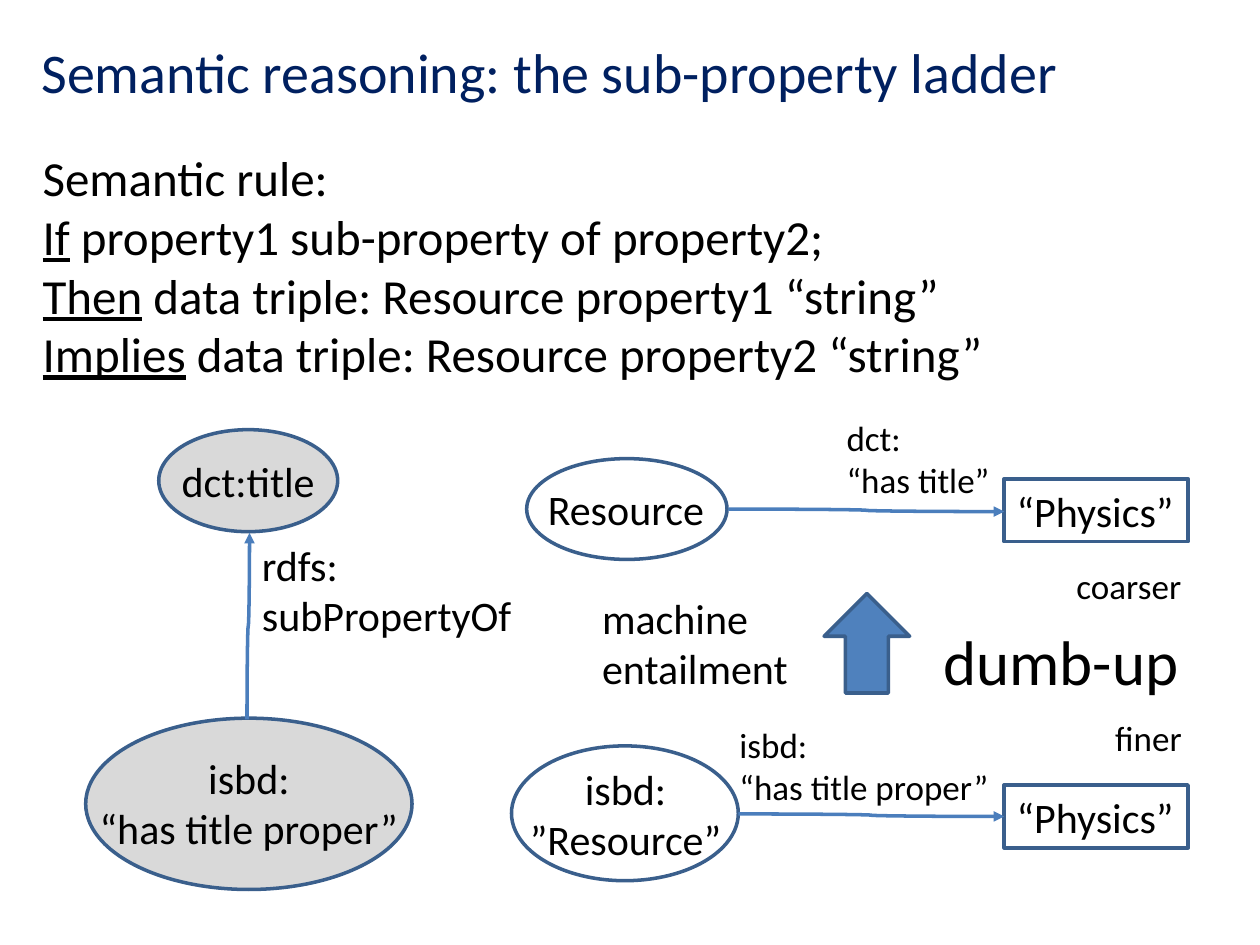
from lxml import etree
from pptx import Presentation
from pptx.dml.color import RGBColor
from pptx.enum.shapes import MSO_CONNECTOR, MSO_SHAPE
from pptx.enum.text import MSO_AUTO_SIZE, PP_ALIGN
from pptx.oxml.ns import qn
from pptx.util import Inches, Pt

CURVE = MSO_CONNECTOR.CURVE
OVAL, RECT, UP_ARROW = MSO_SHAPE.OVAL, MSO_SHAPE.RECTANGLE, MSO_SHAPE.UP_ARROW
LEFT, CENTER = PP_ALIGN.LEFT, PP_ALIGN.CENTER
FIT = MSO_AUTO_SIZE.SHAPE_TO_FIT_TEXT

THEME = {
    "font": "Calibri",
    "title": RGBColor(0x00, 0x20, 0x60), "ink": RGBColor(0, 0, 0),
    "outline": RGBColor(0x3A, 0x5F, 0x8C), "link": RGBColor(0x4B, 0x7E, 0xBC),
    "accent": RGBColor(0x4F, 0x81, 0xBD), "gray": RGBColor(0xD9, 0xD9, 0xD9),
    "white": RGBColor(0xFF, 0xFF, 0xFF),
    "title_pt": Pt(32), "rule_pt": Pt(28), "node_pt": Pt(24),
    "label_pt": Pt(20), "big_pt": Pt(36), "line_pt": Pt(2),
}

prs = Presentation()
prs.slide_width, prs.slide_height = Inches(10), Inches(7.5)
slide = prs.slides.add_slide(prs.slide_layouts[6])
shapes = slide.shapes

# Grid of 100 columns by 75 rows
COL, ROW = prs.slide_width / 100, prs.slide_height / 75


def grid(x, y, x2, y2):
    return int(x * COL), int(y * ROW), int(x2 * COL), int(y2 * ROW)


def write(s, lines, size, color="ink", align=LEFT, wrap=False):
    """Fill a shape with lines; a (lead, rest) pair underlines its lead."""
    tf = s.text_frame
    tf.word_wrap, tf.auto_size = wrap, FIT
    for i, line in enumerate(lines):
        p = tf.paragraphs[0] if i == 0 else tf.add_paragraph()
        p.alignment = align
        parts = (line,) if isinstance(line, str) else line
        for j, part in enumerate(parts):
            r = p.add_run()
            r.text = part
            r.font.name, r.font.size = THEME["font"], THEME[size]
            r.font.color.rgb = THEME[color]
            if len(parts) > 1 and j == 0:
                r.font.underline = True


# Title and semantic rule
write(shapes.add_textbox(*grid(2.3, 2.5, 83.6, 6.4)),
      ["Semantic reasoning: the sub-property ladder"], "title_pt", "title")
write(shapes.add_textbox(*grid(2.4, 11.2, 91.9, 19.9)), [
    "Semantic rule:",
    ("If", " property1 sub-property of property2;"),
    ("Then", " data triple: Resource property1 “string”"),
    ("Implies", " data triple: Resource property2 “string”"),
], "rule_pt", wrap=True)

# Ellipses, value boxes and the block arrow
PHYSICS_X, PHYSICS_W, PHYSICS_H = 79.7, 14.6, 5
for kind, fill, box, lines in [
    (OVAL, "gray", (6.8, 57, 25.9, 13.6), []),
    (OVAL, "gray", (12.6, 34.1, 14.2, 8.1), []),
    (OVAL, "white", (40.6, 59.2, 18, 10.7), []),
    (OVAL, "white", (41.8, 36.4, 15.9, 8), []),
    (RECT, None, (PHYSICS_X, 62.3, PHYSICS_W, PHYSICS_H), ["“Physics”"]),
    (RECT, None, (PHYSICS_X, 38, PHYSICS_W, PHYSICS_H), ["“Physics”"]),
    (UP_ARROW, "accent", (65.4, 47.1, 6.8, 7.9), []),
]:
    s = shapes.add_shape(kind, *grid(*box))
    s.shadow.inherit = False
    if fill:
        s.fill.solid()
        s.fill.fore_color.rgb = THEME[fill]
    else:
        s.fill.background()
    s.line.color.rgb, s.line.width = THEME["outline"], THEME["line_pt"]
    if lines:
        write(s, lines, "node_pt")

# Curved arrows: start, end, quarter turns about the centre
for ends, turns in [
    ((27.1, 49.8, 12.3, 49.6), 1),
    ((58.6, 64.6, PHYSICS_X, 64.8), 0),
    ((57.8, 40.4, PHYSICS_X, 40.6), 0),
]:
    link = shapes.add_connector(CURVE, *grid(*ends))
    link.line.color.rgb, link.line.width = THEME["link"], THEME["line_pt"]
    sp_pr = link._element.spPr
    if turns:
        sp_pr.find(qn("a:xfrm")).set("rot", str(turns * 5400000))
    etree.SubElement(sp_pr.find(qn("a:ln")), qn("a:tailEnd"), type="triangle")
    etree.SubElement(sp_pr, qn("a:effectLst"))

# Node names and labels
for box, lines, size, align, wrap in [
    ((6.8, 59.2, 25.9, 9.1), ["isbd:", "“has title proper”"], "node_pt", CENTER, True),
    ((13.4, 35.7, 12.6, 5), ["dct:title"], "node_pt", CENTER, True),
    ((41, 60.1, 17.3, 9.1), ["isbd:", "”Resource”"], "node_pt", CENTER, False),
    ((42.5, 37.9, 14.6, 5), ["Resource"], "node_pt", LEFT, False),
    ((19.8, 42.3, 22, 9.1), ["rdfs:", "subPropertyOf"], "node_pt", LEFT, False),
    ((57.7, 56.9, 22, 7.7), ["isbd:", "“has title proper”"], "label_pt", LEFT, False),
    ((66.2, 32.6, 13.5, 7.7), ["dct:", "“has title”"], "label_pt", LEFT, False),
    ((46.8, 46.5, 16.9, 9.1), ["machine", "entailment"], "node_pt", LEFT, False),
    ((83.6, 44.3, 12, 4.4), ["coarser"], "label_pt", CENTER, True),
    ((86.6, 56.4, 9.1, 4.4), ["finer"], "label_pt", CENTER, True),
    ((72.9, 48.9, 22.6, 7.1), ["dumb-up"], "big_pt", CENTER, True),
]:
    write(shapes.add_textbox(*grid(*box)), lines, size, align=align, wrap=wrap)

prs.save("out.pptx")
